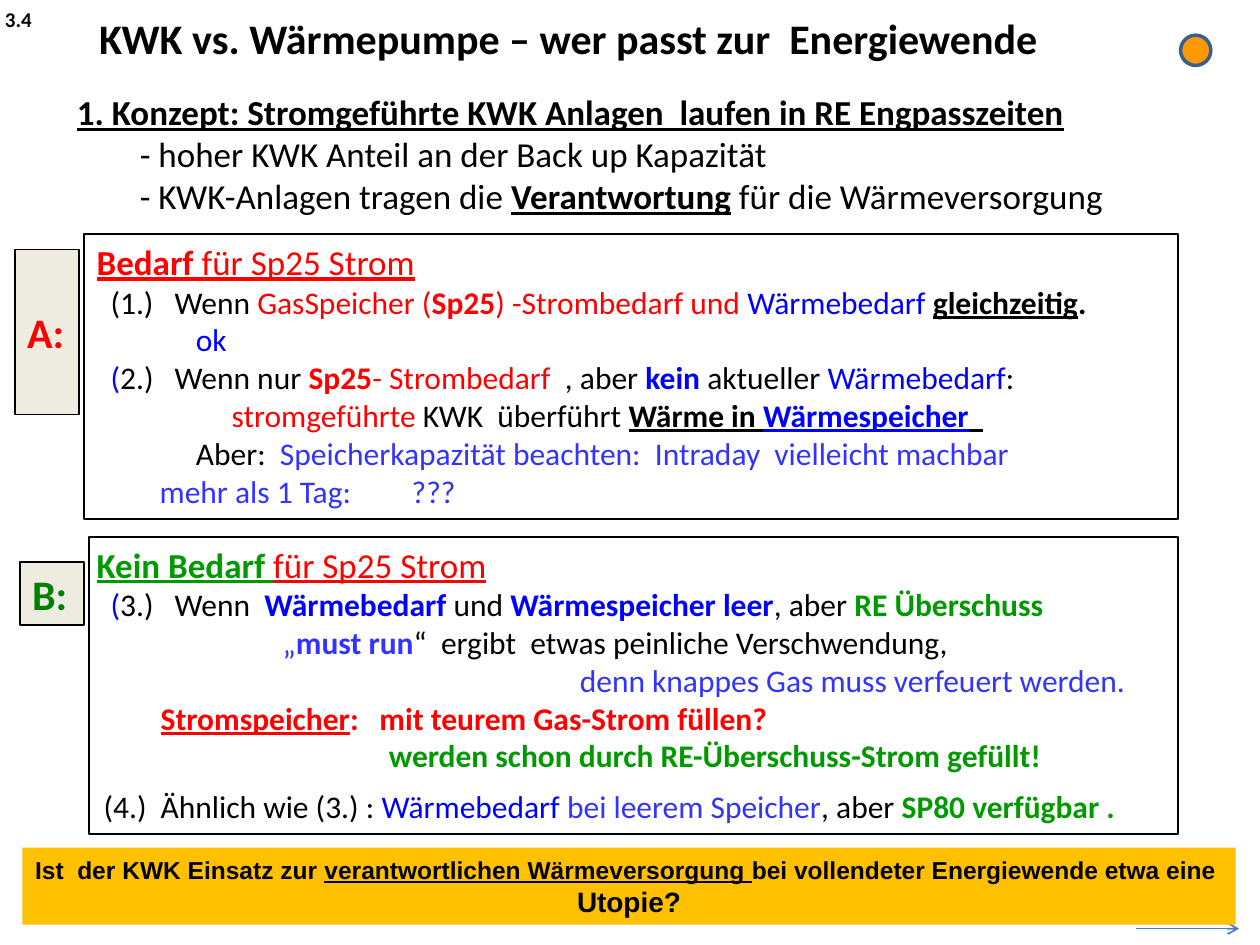
from lxml import etree
from pptx import Presentation
from pptx.dml.color import RGBColor
from pptx.enum.shapes import MSO_CONNECTOR, MSO_SHAPE
from pptx.enum.text import MSO_ANCHOR, PP_ALIGN
from pptx.oxml.ns import qn
from pptx.util import Cm, Pt

RECTANGLE, OVAL = MSO_SHAPE.RECTANGLE, MSO_SHAPE.OVAL
STRAIGHT = MSO_CONNECTOR.STRAIGHT
TOP, MIDDLE = MSO_ANCHOR.TOP, MSO_ANCHOR.MIDDLE
LEFT, CENTER = PP_ALIGN.LEFT, PP_ALIGN.CENTER

BLACK, RED, BLUE, VIOLET, GREEN = "000000", "FF0000", "0000FF", "3333FF", "009900"

# Panel lines: (start in cm, tab position in cm, runs of (text, colour, style));
# in a style, b is bold and u is underlined
DEMAND_LINES = [
    (0, 0, [("Bedarf ", RED, "bu"), ("für Sp25 Strom", RED, "u")]),
    (0.28, 1.57, [("(1.)\tWenn ", BLACK, ""), ("GasSpeicher (", RED, ""), ("Sp25", RED, "b"),
                  (") -Strombedarf und ", RED, ""), ("Wärmebedarf ", BLUE, ""),
                  ("gleichzeitig", BLACK, "bu"), (".", BLACK, "b")]),
    (2, 2, [("ok", BLUE, "")]),
    (0.28, 1.57, [("(", BLUE, ""), ("2.)\tWenn nur ", BLACK, ""), ("Sp25", RED, "b"),
                  ("- Strombedarf", RED, ""), ("  , aber ", BLACK, ""), ("kein", BLUE, "b"),
                  (" aktueller ", BLACK, ""), ("Wärmebedarf", BLUE, ""), (":", BLACK, "")]),
    (2.72, 2.72, [("stromgeführte", RED, ""), (" KWK  überführt ", BLACK, ""),
                  ("Wärme in ", BLACK, "bu"), ("Wärmespeicher", BLUE, "bu"),
                  ("  ", BLACK, "bu")]),
    (2, 2, [("Aber:  ", BLACK, ""),
            ("Speicherkapazität beachten:  Intraday  vielleicht machbar", VIOLET, "")]),
    (11.17, 15.74, [("\tmehr als 1 Tag:\t???", VIOLET, "")]),
]
NO_DEMAND_LINES = [
    (0, 0, [("Kein Bedarf ", GREEN, "bu"), ("für Sp25 Strom", RED, "u")]),
    (0.28, 1.57, [("(", BLUE, ""), ("3.)\tWenn  ", BLACK, ""), ("Wärmebedarf", BLUE, "b"),
                  (" und ", BLACK, ""), ("Wärmespeicher leer", BLUE, "b"),
                  (", aber ", BLACK, ""), ("RE Überschuss", GREEN, "b")]),
    (3.75, 3.75, [("„", VIOLET, ""), ("must run", VIOLET, "b"),
                  ("“  ergibt  etwas peinliche Verschwendung,", BLACK, "")]),
    (9.74, 9.74, [("denn knappes Gas muss verfeuert werden.", VIOLET, "")]),
    (1.29, 5.7, [("Stromspeicher", RED, "bu"), (":\tmit teurem Gas-Strom füllen?", RED, "b")]),
    (5.89, 5.89, [("werden schon durch RE-Überschuss-Strom gefüllt!", GREEN, "b")]),
    (0.14, 1.29, [("(4.)\tÄhnlich wie (3.) : ", BLACK, ""), ("Wärmebedarf ", BLUE, ""),
                  ("bei leerem Speicher", VIOLET, ""), (", aber ", BLACK, ""),
                  ("SP80 verfügbar .", GREEN, "b")]),
]
CONCEPT_LINES = [
    (0, 0, [("1. Konzept: Stromgeführte KWK Anlagen  laufen in RE Engpasszeiten", BLACK, "bu")]),
    (1.27, 1.27, [("- hoher KWK Anteil an der Back up Kapazität", BLACK, "")]),
    (1.27, 1.27, [("- KWK-Anlagen tragen die ", BLACK, ""), ("Verantwortung", BLACK, "bu"),
                  (" für die Wärmeversorgung", BLACK, "")]),
]


def color(value):
    return RGBColor.from_string(value)


def add_text(paragraph, text, size=18, font="Calibri", fill=BLACK, style=""):
    run = paragraph.add_run()
    run.text = text
    run.font.size = Pt(size)
    run.font.name = font
    run.font.color.rgb = color(fill)
    run.font.bold = "b" in style
    run.font.underline = "u" in style


def set_frame(shape, margins=(0.25, 0.13), anchor=TOP, wrap=True):
    frame = shape.text_frame
    frame.word_wrap = wrap
    frame.vertical_anchor = anchor
    frame.margin_left = frame.margin_right = Cm(margins[0])
    frame.margin_top = frame.margin_bottom = Cm(margins[1])
    return frame


def set_indent(paragraph, start, tab, starts_with_tab):
    """Use two tab stops for a line that starts with a tab, else a hanging indent."""
    properties = paragraph._p.get_or_add_pPr()
    if starts_with_tab:
        properties.set("marL", "0")
        properties.set("indent", "0")
        tab_stops = etree.SubElement(properties, qn("a:tabLst"))
        for position in (start, tab):
            etree.SubElement(tab_stops, qn("a:tab"), pos=str(Cm(position)), algn="l")
    else:
        properties.set("marL", str(Cm(tab)))
        properties.set("indent", str(Cm(start) - Cm(tab)))


def add_lines(frame, lines, sizes):
    """Write one paragraph per line."""
    for number, ((start, tab, runs), size) in enumerate(zip(lines, sizes)):
        paragraph = frame.paragraphs[0] if number == 0 else frame.add_paragraph()
        paragraph.alignment = LEFT
        set_indent(paragraph, start, tab, runs[0][0].startswith("\t"))
        for text, fill, style in runs:
            add_text(paragraph, text, size=size, fill=fill, style=style)


def add_box(slide, box, kind=RECTANGLE, fill=None, line=None, width=1):
    shape = slide.shapes.add_shape(kind, *map(Cm, box))
    shape.shadow.inherit = False
    if fill:
        shape.fill.solid()
        shape.fill.fore_color.rgb = color(fill)
    else:
        shape.fill.background()
    if line:
        shape.line.color.rgb = color(line)
        shape.line.width = Pt(width)
    else:
        shape.line.fill.background()
    return shape


def add_label(slide, box, text, size, margins=(0.25, 0.13)):
    frame = set_frame(slide.shapes.add_textbox(*map(Cm, box)), margins)
    add_text(frame.paragraphs[0], text, size=size, style="b")


def add_header(slide, box):
    left, top, width, height = box
    add_label(slide, (left, top, 0.89, 0.51), "3.4", 12, margins=(0, 0))
    add_label(slide, (left + 1.65, top, 22.1, height),
              "KWK vs. Wärmepumpe – wer passt zur  Energiewende", 24)
    add_box(slide, (left + width - 0.61, top + 0.58, 0.61, 0.61), OVAL, "FF9900", "3A5F8C", 2)


def add_concept(slide, box):
    frame = set_frame(slide.shapes.add_textbox(*map(Cm, box)))
    add_lines(frame, CONCEPT_LINES, [20] * len(CONCEPT_LINES))


def add_panel(slide, box, lines, margin, badge, badge_color, badge_drop, badge_height):
    """Framed text with a letter badge to its left."""
    left, top = box[:2]
    badge_box = (left - 1.4, top + badge_drop, 1.3, badge_height)
    badge_shape = add_box(slide, badge_box, fill="EEECE1", line=BLACK)
    paragraph = set_frame(badge_shape, anchor=MIDDLE, wrap=False).paragraphs[0]
    paragraph.alignment = LEFT
    add_text(paragraph, badge, size=24, fill=badge_color, style="b")

    frame = set_frame(add_box(slide, box, line=BLACK), (margin, 0.13))
    add_lines(frame, lines, [20] + [18] * (len(lines) - 1))
    return frame


def add_footer(slide, box):
    left, top, width, height = box
    # Arrow to the next slide
    arrow_top = Cm(top + height + 0.08)
    arrow = slide.shapes.add_connector(
        STRAIGHT, Cm(left + width - 2.01), arrow_top, Cm(left + width + 0.07), arrow_top)
    arrow.line.color.rgb = color("4B7EBC")
    arrow.line.width = Pt(1)
    etree.SubElement(arrow.line._get_or_add_ln(), qn("a:tailEnd"), type="arrow")
    etree.SubElement(arrow._element.spPr, qn("a:effectLst"))

    # Closing question
    frame = set_frame(add_box(slide, box, fill="FFC000"), anchor=MIDDLE, wrap=False)
    question, last_word = frame.paragraphs[0], frame.add_paragraph()
    question.alignment = last_word.alignment = CENTER
    for text, style in (("Ist  der KWK Einsatz zur ", "b"),
                        ("verantwortlichen Wärmeversorgung ", "bu"),
                        ("bei vollendeter Energiewende etwa eine ", "b")):
        add_text(question, text, size=14, font="Arial", style=style)
    add_text(last_word, "Utopie?", size=16, font="Arial", style="b")


def main():
    presentation = Presentation()
    presentation.slide_width, presentation.slide_height = Cm(25.4), Cm(19.05)
    slide = presentation.slides.add_slide(presentation.slide_layouts[6])

    add_header(slide, (0.1, 0.13, 24.31, 1.27))
    add_concept(slide, (1.3, 1.7, 23.6, 3.15))
    add_panel(slide, (1.7, 4.72, 22.05, 5.74), DEMAND_LINES, 0.25, "A:", RED, 0.31, 3.33)
    no_demand = add_panel(slide, (1.8, 10.82, 21.95, 5.99), NO_DEMAND_LINES, 0.15,
                          "B:", "008000", 0.51, 1.27)
    no_demand.paragraphs[-1].space_before = Pt(7.3)
    add_footer(slide, (0.45, 17.09, 24.46, 1.55))

    presentation.save("out.pptx")


if __name__ == "__main__":
    main()
